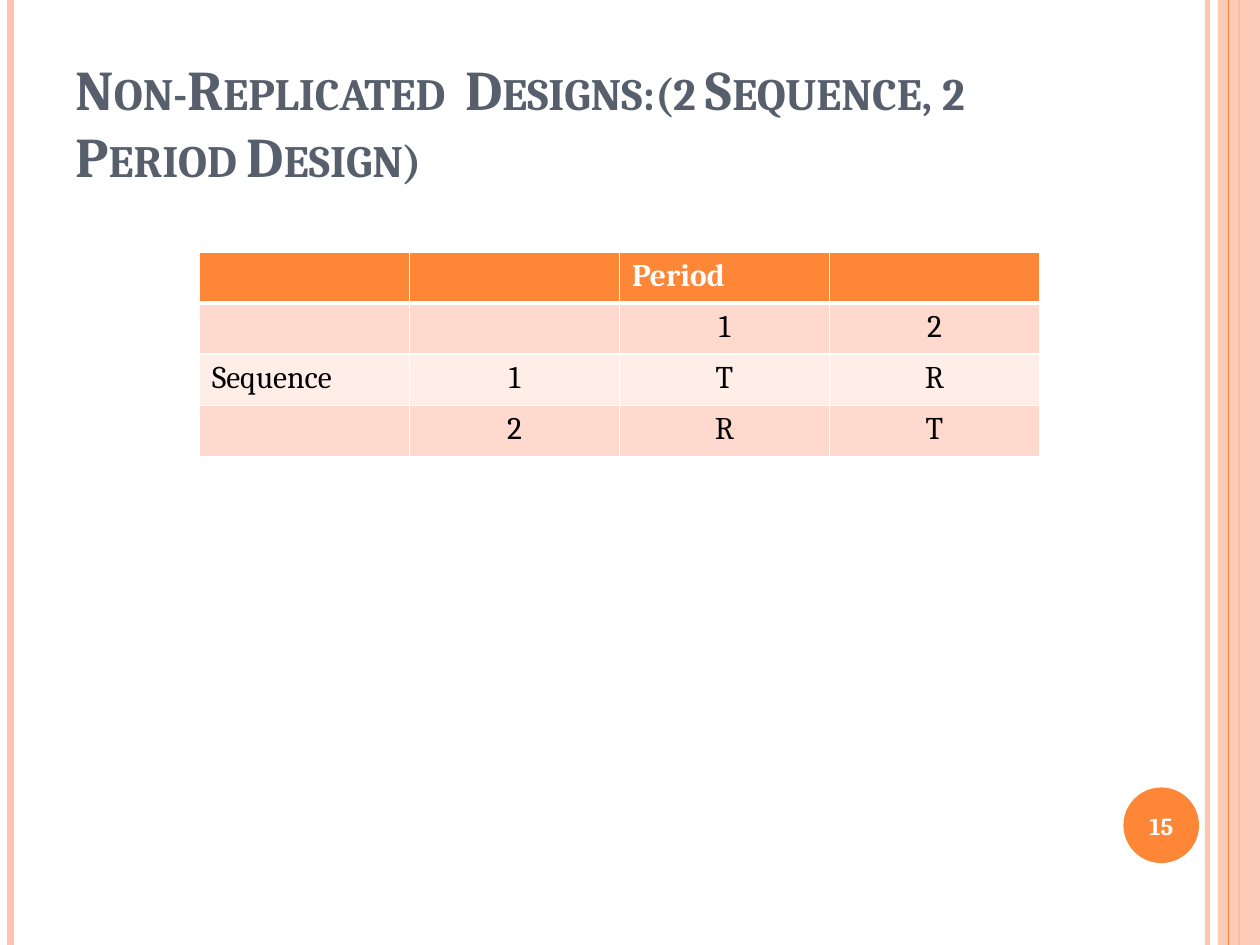
from lxml import etree
from pptx import Presentation
from pptx.dml.color import RGBColor
from pptx.enum import shapes, text
from pptx.oxml import ns
from pptx.util import Pt

ORANGE = RGBColor(0xFE, 0x86, 0x37)
PEACH = RGBColor(0xFE, 0xC3, 0xAE)
SLATE = RGBColor(0x57, 0x5F, 0x6D)
BAND_DARK = RGBColor(0xFF, 0xD9, 0xCE)
BAND_LIGHT = RGBColor(0xFF, 0xED, 0xE8)
WHITE = RGBColor(0xFF, 0xFF, 0xFF)
BLACK = RGBColor(0, 0, 0)
FONT = "Cambria"

DESIGN = [
    ["", "", "Period", ""],
    ["", "", "1", "2"],
    ["Sequence", "1", "T", "R"],
    ["", "2", "R", "T"],
]


def set_alpha(fill_owner, percent):
    """Make the first solid colour inside an element partly transparent."""
    color = next(fill_owner.iter(ns.qn("a:srgbClr")))
    etree.SubElement(color, ns.qn("a:alpha")).set("val", str(percent * 1000))


def style_paragraph(paragraph, size, color, bold=False, alignment=None):
    """Align a paragraph and format its runs."""
    paragraph.alignment = alignment
    for run in paragraph.runs:
        run.font.name = FONT
        run.font.size = Pt(size)
        run.font.bold = bold
        run.font.color.rgb = color


def add_shape(slide, kind, left, top, width, height, color):
    """Add a flat shape without an outline."""
    shape = slide.shapes.add_shape(kind, Pt(left), Pt(top), Pt(width), Pt(height))
    shape.shadow.inherit = False
    shape.fill.solid()
    shape.fill.fore_color.rgb = color
    shape.line.fill.background()
    return shape


def add_text(slide, left, top, width, height, wording, anchor):
    """Add a wrapping text box and return its frame."""
    box = slide.shapes.add_textbox(Pt(left), Pt(top), Pt(width), Pt(height))
    frame = box.text_frame
    frame.word_wrap = True
    frame.vertical_anchor = anchor
    frame.text = wording
    return frame


def add_rule(slide, x, top, height, color, weight):
    """Add a vertical line without a shadow."""
    rule = slide.shapes.add_connector(
        shapes.MSO_CONNECTOR.STRAIGHT, Pt(x), Pt(top), Pt(x), Pt(top + height))
    rule.line.color.rgb = color
    rule.line.width = Pt(weight)
    properties = rule._element.spPr
    etree.SubElement(properties, ns.qn("a:effectLst"))
    return rule


def add_side_stripes(slide, left, top, width, height):
    """Draw the stripes along both sides of the slide."""
    right = left + width
    inner = add_rule(slide, right - 30, top, height, PEACH, 3)
    set_alpha(inner._element.spPr, 93)
    add_rule(slide, left + 6, top, height, PEACH, 4.5)
    add_rule(slide, right - 12, top, height, ORANGE, 1.5)
    band = add_shape(slide, shapes.MSO_SHAPE.RECTANGLE,
                     right - 24, top, 24, height, PEACH)
    set_alpha(band._element.spPr, 87)
    add_rule(slide, right - 18, top, height, ORANGE, 0.75)


def add_title(slide, left, top, width, height):
    """Write the heading in bold small capitals."""
    frame = add_text(slide, left, top, width, height,
                     "Non-Replicated  Designs:(2 Sequence, 2 Period Design)",
                     text.MSO_ANCHOR.BOTTOM)
    paragraph = frame.paragraphs[0]
    style_paragraph(paragraph, 32, SLATE, bold=True)
    for run in paragraph.runs:
        run.font._element.set("cap", "small")


def add_page_number(slide, left, top, size):
    """Draw the round badge with the slide number."""
    add_shape(slide, shapes.MSO_SHAPE.OVAL, left, top, size, size, ORANGE)
    frame = add_text(slide, left - 2.4, top + 1.2, size + 4.8, size - 2.4,
                     "15", text.MSO_ANCHOR.MIDDLE)
    style_paragraph(frame.paragraphs[0], 14, WHITE, True, text.PP_ALIGN.CENTER)


def set_borders(cell, weights):
    """Give a cell white borders with the given left, right, top and bottom weights."""
    properties = cell._tc.get_or_add_tcPr()
    for index, (side, weight) in enumerate(zip("LRTB", weights)):
        border = etree.Element(ns.qn(f"a:ln{side}"), w=str(Pt(weight)))
        fill = etree.SubElement(border, ns.qn("a:solidFill"))
        etree.SubElement(fill, ns.qn("a:srgbClr")).set("val", str(WHITE))
        properties.insert(index, border)


def add_design_table(slide, left, top, width, row_height):
    """Add the crossover table with a header and banded rows."""
    rows, columns = len(DESIGN), len(DESIGN[0])
    table = slide.shapes.add_table(rows, columns, Pt(left), Pt(top),
                                   Pt(width), Pt(row_height * rows)).table
    for column in table.columns:
        column.width = Pt(width / columns)
    for r, row in enumerate(DESIGN):
        table.rows[r].height = Pt(row_height)
        header = r == 0
        band = ORANGE if header else BAND_DARK if r % 2 else BAND_LIGHT
        for c, wording in enumerate(row):
            cell = table.cell(r, c)
            cell.text = wording
            cell.fill.solid()
            cell.fill.fore_color.rgb = band
            set_borders(cell, (1, 1, 3 if r == 1 else 1, 3 if header else 1))
            centred = not header and c > 0
            style_paragraph(cell.text_frame.paragraphs[0], 18,
                            WHITE if header else BLACK, header,
                            text.PP_ALIGN.CENTER if centred else None)


def main():
    """Build and save the slide."""
    presentation = Presentation()
    presentation.slide_width, presentation.slide_height = Pt(720), Pt(540)
    slide = presentation.slides.add_slide(presentation.slide_layouts[6])
    add_side_stripes(slide, 0, 0, 720, 540)
    add_title(slide, 36, 21.6, 588, 90)
    add_page_number(slide, 642, 450, 43.2)
    add_design_table(slide, 114, 144, 480, 29.2)
    presentation.save("out.pptx")


if __name__ == "__main__":
    main()
